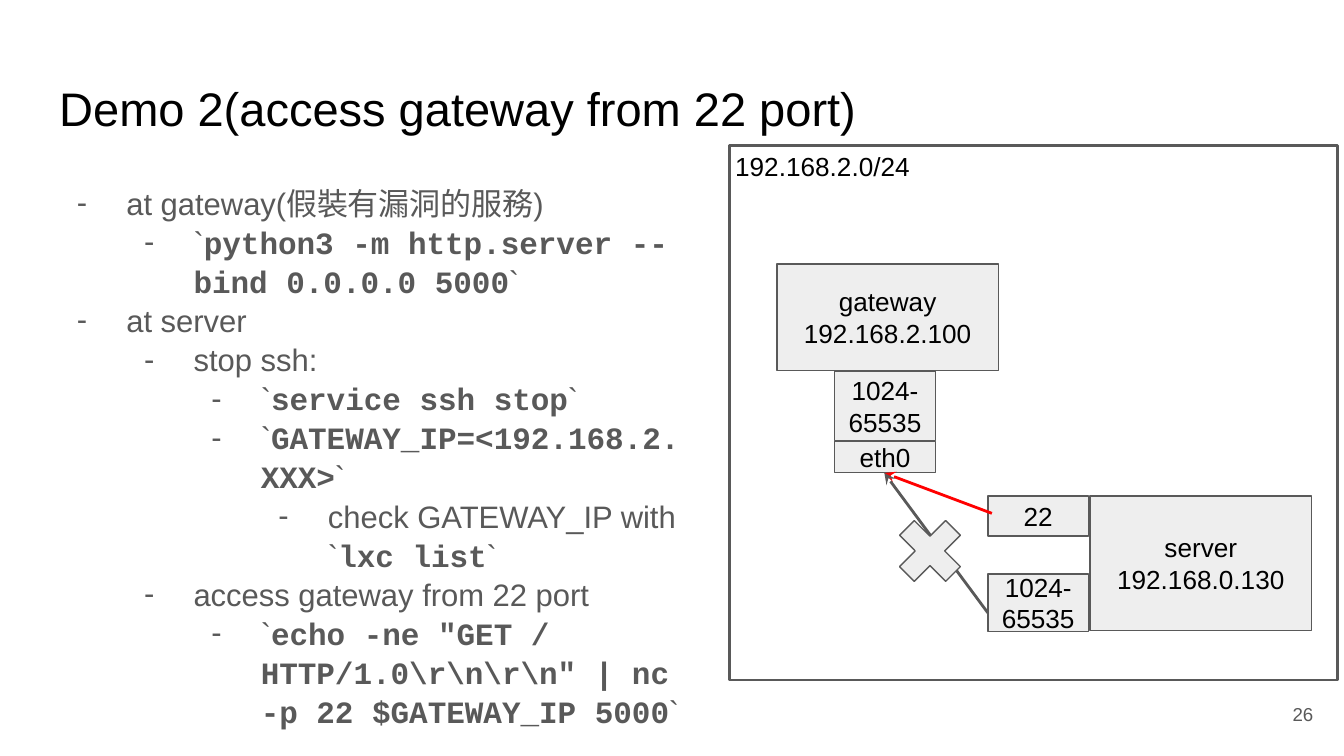
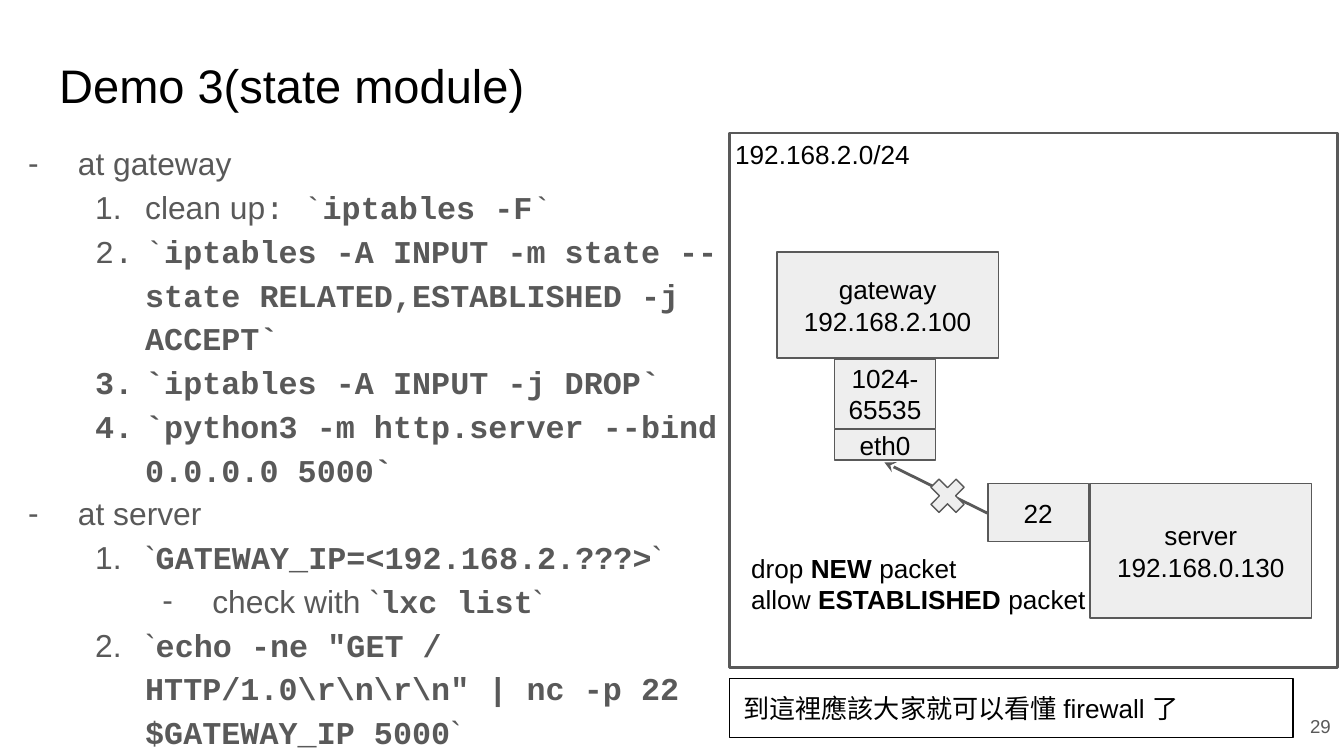
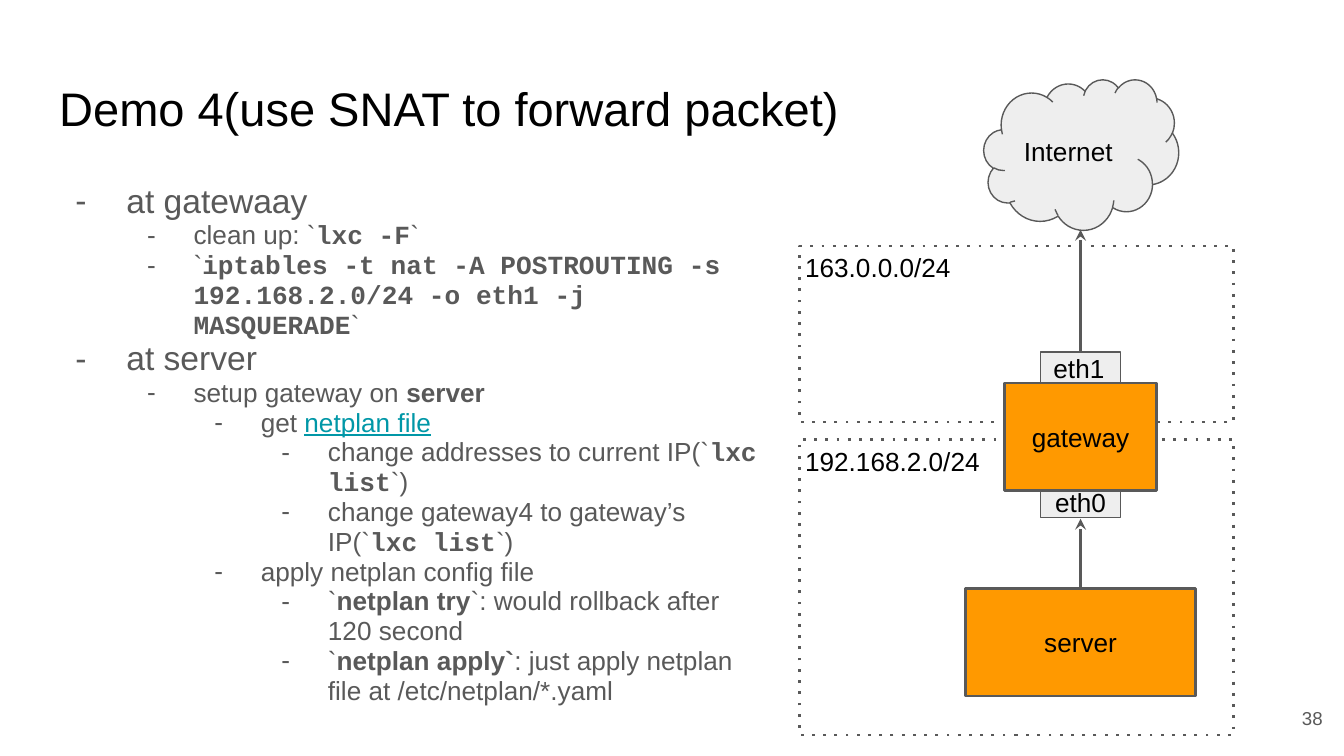
from dataclasses import dataclass
from typing import NamedTuple, Optional

from lxml import etree
from pptx import Presentation
from pptx import util as u
from pptx.dml import color
from pptx.enum import shapes, text
from pptx.oxml import ns

COLUMNS, ROWS = 100, 56.25
CELL = u.Inches(0.1)
INSET = 1

SANS, MONO = "Arial", "Courier New"
BLACK, GREY, PALE = "000000", "595959", "EEEEEE"
ORANGE, RED, LINK = "FF9900", "FF0000", "0097A7"
THIN, THICK = 0.75, 1.5
LABEL_SIZE = 14
LEFT, CENTER, RIGHT = text.PP_ALIGN.LEFT, text.PP_ALIGN.CENTER, text.PP_ALIGN.RIGHT
TOP, MIDDLE = text.MSO_ANCHOR.TOP, text.MSO_ANCHOR.MIDDLE
RECTANGLE = shapes.MSO_SHAPE.RECTANGLE


class Box(NamedTuple):
    """Left, top, width and height in grid cells."""
    left: float
    top: float
    width: float
    height: float


class Run(NamedTuple):
    text: str
    bold: bool = False
    font: Optional[str] = None
    link: bool = False


@dataclass
class Item:
    level: int
    runs: list[Run]
    numbered: bool = False


@dataclass
class Page:
    title: str
    title_top: float
    number: str
    number_at: tuple[float, float]
    body: Box
    size: float
    sub_size: float
    spacing: float
    items: list[Item]


def plain(words: str) -> list[Run]:
    return [Run(words)]


def bold(words: str) -> list[Run]:
    return [Run(words, True)]


def mono(words: str, strong: bool = True) -> list[Run]:
    return [Run(words, strong, MONO)]


def code(words: str) -> list[Run]:
    """A bold command between plain backticks."""
    return plain("`") + mono(words) + plain("`")


def cells(*lengths: float) -> list[int]:
    return [round(length * CELL) for length in lengths]


def rgb(value: str) -> color.RGBColor:
    return color.RGBColor.from_string(value)


def add_element(parent, tag: str, **attributes: str):
    return etree.SubElement(parent, ns.qn(tag), attributes)


def format_frame(frame, anchor, inset: float = INSET) -> None:
    frame.word_wrap = True
    frame.auto_size = text.MSO_AUTO_SIZE.NONE
    frame.vertical_anchor = anchor
    frame.margin_left, frame.margin_top = cells(inset, inset)
    frame.margin_right, frame.margin_bottom = cells(INSET, INSET)


def write_paragraph(paragraph, runs: list[Run], size: float, tint: str = BLACK, align=LEFT) -> None:
    paragraph.alignment = align
    paragraph.font.name = SANS
    paragraph.font.size = u.Pt(size)
    paragraph.font.color.rgb = rgb(tint)
    for part in runs:
        run = paragraph.add_run()
        run.text = part.text
        if part.bold:
            run.font.bold = True
        if part.font:
            run.font.name = part.font
        if part.link:
            run.font.underline = True
            run.font.color.rgb = rgb(LINK)


def write_lines(frame, lines: list[list[Run]], size: float = LABEL_SIZE, tint: str = BLACK, align=LEFT) -> None:
    for index, runs in enumerate(lines):
        paragraph = frame.add_paragraph() if index else frame.paragraphs[0]
        write_paragraph(paragraph, runs, size, tint, align)


def add_bullet(paragraph, item: Item, size: float) -> None:
    properties = paragraph._p.get_or_add_pPr()
    hanging = round(u.Pt(size) * 0.62) + u.Inches(0.225)
    properties.set("marL", str(u.Inches(0.5 * (item.level + 1))))
    properties.set("indent", str(-hanging))
    bullet_color = etree.Element(ns.qn("a:buClr"))
    add_element(bullet_color, "a:srgbClr", val=GREY)
    if item.numbered:
        marks = [etree.Element(ns.qn("a:buAutoNum"), type="arabicPeriod")]
    else:
        marks = [etree.Element(ns.qn("a:buFont"), typeface=SANS),
                 etree.Element(ns.qn("a:buChar"), char="-")]
    defaults = properties.find(ns.qn("a:defRPr"))
    for element in [bullet_color, *marks]:
        defaults.addprevious(element)


def place(shape, box: Box) -> None:
    shape.left, shape.top, shape.width, shape.height = cells(*box)


def add_text(slide, box: Box, lines: list[list[Run]], inset: float = INSET, anchor=TOP,
             size: float = LABEL_SIZE, tint: str = BLACK, align=LEFT) -> None:
    frame = slide.shapes.add_textbox(*cells(*box)).text_frame
    format_frame(frame, anchor, inset)
    write_lines(frame, lines, size, tint, align)


def add_box(slide, box: Box, *lines: str, fill: Optional[str] = PALE, line: str = GREY,
            weight: float = THIN, dotted: bool = False, kind=RECTANGLE, align=CENTER, anchor=MIDDLE):
    shape = slide.shapes.add_shape(kind, *cells(*box))
    shape.shadow.inherit = False
    if fill:
        shape.fill.solid()
        shape.fill.fore_color.rgb = rgb(fill)
    else:
        shape.fill.background()
    shape.line.color.rgb = rgb(line)
    shape.line.width = u.Pt(weight)
    if dotted:
        add_element(shape.line._get_or_add_ln(), "a:prstDash", val="dot")
    format_frame(shape.text_frame, anchor)
    write_lines(shape.text_frame, [plain(words) for words in lines], align=align)
    return shape


def add_arrow(slide, start: tuple[float, float], tip: tuple[float, float], tint: str = GREY) -> None:
    connector = slide.shapes.add_connector(shapes.MSO_CONNECTOR.STRAIGHT, *cells(*start, *tip))
    connector.line.color.rgb = rgb(tint)
    connector.line.width = u.Pt(THICK)
    add_element(connector.line._get_or_add_ln(), "a:tailEnd", type="stealth")
    add_element(connector._element.spPr, "a:effectLst")


def add_network(slide, box: Box, address: str, dotted: bool = False) -> None:
    add_box(slide, box, fill=None, weight=THICK, dotted=dotted)
    add_text(slide, Box(box.left, box.top, 20.7, 3.8), [plain(address)], inset=0.4)


def add_cross(slide, box: Box, kind, rotation: float = 0) -> None:
    cross = add_box(slide, box, kind=kind)
    cross.adjustments[0] = 0.235
    cross.rotation = rotation


def add_lan(slide, top: float) -> None:
    """Gateway with its ports, and the server, inside one network."""
    add_network(slide, Box(54.3, top, 45.2, 39.8), "192.168.2.0/24")
    add_box(slide, Box(57.8, top + 8.85, 16.5, 7.9), "gateway", "192.168.2.100")
    add_box(slide, Box(62.1, top + 16.8, 7.5, 5.2), "1024-65535")
    add_box(slide, Box(62.1, top + 22.05, 7.5, 2.3), "eth0")
    add_box(slide, Box(81.1, top + 26.1, 16.5, 10), "server", "192.168.0.130")


def add_page(presentation, page: Page):
    slide = presentation.slides.add_slide(presentation.slide_layouts[1])
    title, body = slide.placeholders
    place(title, Box(3.4, page.title_top, 93.2, 6.3))
    format_frame(title.text_frame, TOP)
    write_lines(title.text_frame, [plain(page.title)], 25.2)

    place(body, page.body)
    frame = body.text_frame
    format_frame(frame, TOP)
    for index, item in enumerate(page.items):
        paragraph = frame.add_paragraph() if index else frame.paragraphs[0]
        size = page.sub_size if item.level else page.size
        paragraph.level = item.level
        paragraph.line_spacing = page.spacing
        paragraph.space_before = paragraph.space_after = u.Pt(0)
        write_paragraph(paragraph, item.runs, size, GREY)
        add_bullet(paragraph, item, size)

    add_text(slide, Box(*page.number_at, 6, 4.3), [plain(page.number)],
             anchor=MIDDLE, size=10, tint=GREY, align=RIGHT)
    return slide


SERVE = "python3 -m http.server --bind 0.0.0.0 5000"
REQUEST = code('echo -ne "GET / HTTP/1.0\\r\\n\\r\\n" | nc -p 22 $GATEWAY_IP 5000')
LIST = code("lxc list")

PORT_PAGE = Page(
    "Demo 2(access gateway from 22 port)", 4.9, "26", (92.7, 51),
    Box(3.4, 12.6, 49.3, 42.7), 16.6, 16.6, 1.05, [
        Item(0, plain("at gateway(假裝有漏洞的服務)")),
        Item(1, code(SERVE)),
        Item(0, plain("at server")),
        Item(1, plain("stop ssh:")),
        Item(2, code("service ssh stop")),
        Item(2, code("GATEWAY_IP=<192.168.2.XXX>")),
        Item(3, plain("check GATEWAY_IP with ") + LIST),
        Item(1, plain("access gateway from 22 port")),
        Item(2, REQUEST),
    ])

STATE_PAGE = Page(
    "Demo 3(state module)", 3.2, "29", (94, 51.9),
    Box(-0.2, 9.3, 55.3, 43.3), 17, 17, 1.15, [
        Item(0, plain("at gateway")),
        Item(1, plain("clean up") + mono(": `", False) + mono("iptables -F") + mono("`", False), True),
        Item(1, mono("`", False)
             + mono("iptables -A INPUT -m state --state RELATED,ESTABLISHED -j ACCEPT`"), True),
        Item(1, mono("`iptables -A INPUT -j DROP`"), True),
        Item(1, mono(f"`{SERVE}`"), True),
        Item(0, plain("at server")),
        Item(1, code("GATEWAY_IP=<192.168.2.???>"), True),
        Item(2, plain("check with ") + LIST),
        Item(1, REQUEST, True),
    ])

SNAT_PAGE = Page(
    "Demo 4(use SNAT to forward packet)", 4.9, "38", (93.4, 51.3),
    Box(3.4, 12.6, 54.3, 44.9), 18, 14, 0.95, [
        Item(0, plain("at gatewaay")),
        Item(1, plain("clean up: ") + code("lxc -F")),
        Item(1, code("iptables -t nat -A POSTROUTING -s 192.168.2.0/24 -o eth1 -j MASQUERADE")),
        Item(0, plain("at server")),
        Item(1, plain("setup gateway on ") + bold("server")),
        Item(2, plain("get ") + [Run("netplan file", link=True)]),
        Item(3, plain("change addresses to current IP(") + LIST + plain(")")),
        Item(3, plain("change gateway4 to gateway’s IP(") + LIST + plain(")")),
        Item(2, plain("apply netplan config file")),
        Item(3, plain("`") + bold("netplan try") + plain("`: would rollback after 120 second")),
        Item(3, plain("`") + bold("netplan apply`")
             + plain(": just apply netplan file at /etc/netplan/*.yaml")),
    ])


def build_port_slide(presentation) -> None:
    slide = add_page(presentation, PORT_PAGE)
    add_lan(slide, 10.8)
    add_box(slide, Box(73.5, 36.9, 7.5, 3), "22")
    add_box(slide, Box(73.5, 42.7, 7.5, 4.3), "1024-65535")
    eth0 = (65.8, 35.2)
    add_arrow(slide, (73.8, 38.2), eth0, RED)
    add_arrow(slide, (73.5, 45.6), eth0)
    add_cross(slide, Box(65.9, 37.7, 6.6, 6.6), shapes.MSO_SHAPE.MATH_MULTIPLY)


def build_state_slide(presentation) -> None:
    slide = add_page(presentation, STATE_PAGE)
    add_lan(slide, 9.9)
    add_text(slide, Box(54.9, 40.1, 29.2, 6.7), [
        plain("drop ") + bold("NEW") + plain(" packet"),
        plain("allow ") + bold("ESTABLISHED") + plain(" packet"),
    ])
    add_box(slide, Box(54.3, 50.5, 41.9, 4.4), "到這裡應該大家就可以看懂 firewall 了",
            fill=None, line=BLACK, align=LEFT, anchor=TOP)
    add_box(slide, Box(73.5, 36, 7.5, 4.3), "22")
    add_arrow(slide, (73.5, 38.2), (65.8, 34.4))
    add_cross(slide, Box(68.7, 35.1, 3.6, 3.6), shapes.MSO_SHAPE.MATH_PLUS, 45)


def build_snat_slide(presentation) -> None:
    slide = add_page(presentation, SNAT_PAGE)
    add_network(slide, Box(59.5, 32.7, 32.3, 22), "192.168.2.0/24", dotted=True)
    add_network(slide, Box(59.5, 18.3, 32.3, 13.1), "163.0.0.0/24", dotted=True)
    axis = 80.4
    add_arrow(slide, (axis, 43.8), (axis, 38.6))
    add_arrow(slide, (axis, 26.2), (axis, 17.1))
    add_box(slide, Box(axis - 3, 36.2, 6, 2.3), "eth0")
    add_box(slide, Box(axis - 5.65, 28.5, 11.3, 8), "gateway", fill=ORANGE, weight=THICK)
    add_box(slide, Box(axis - 8.55, 43.8, 17.1, 8), "server", fill=ORANGE, weight=THICK)
    add_box(slide, Box(axis - 3, 26.2, 6, 2.3), "eth1", align=LEFT)
    add_box(slide, Box(73.2, 5.9, 14.5, 11.2), "Internet", kind=shapes.MSO_SHAPE.CLOUD, align=LEFT)


def main() -> None:
    presentation = Presentation()
    presentation.slide_width, presentation.slide_height = cells(COLUMNS, ROWS)
    build_port_slide(presentation)
    build_state_slide(presentation)
    build_snat_slide(presentation)
    presentation.save("out.pptx")


if __name__ == "__main__":
    main()
